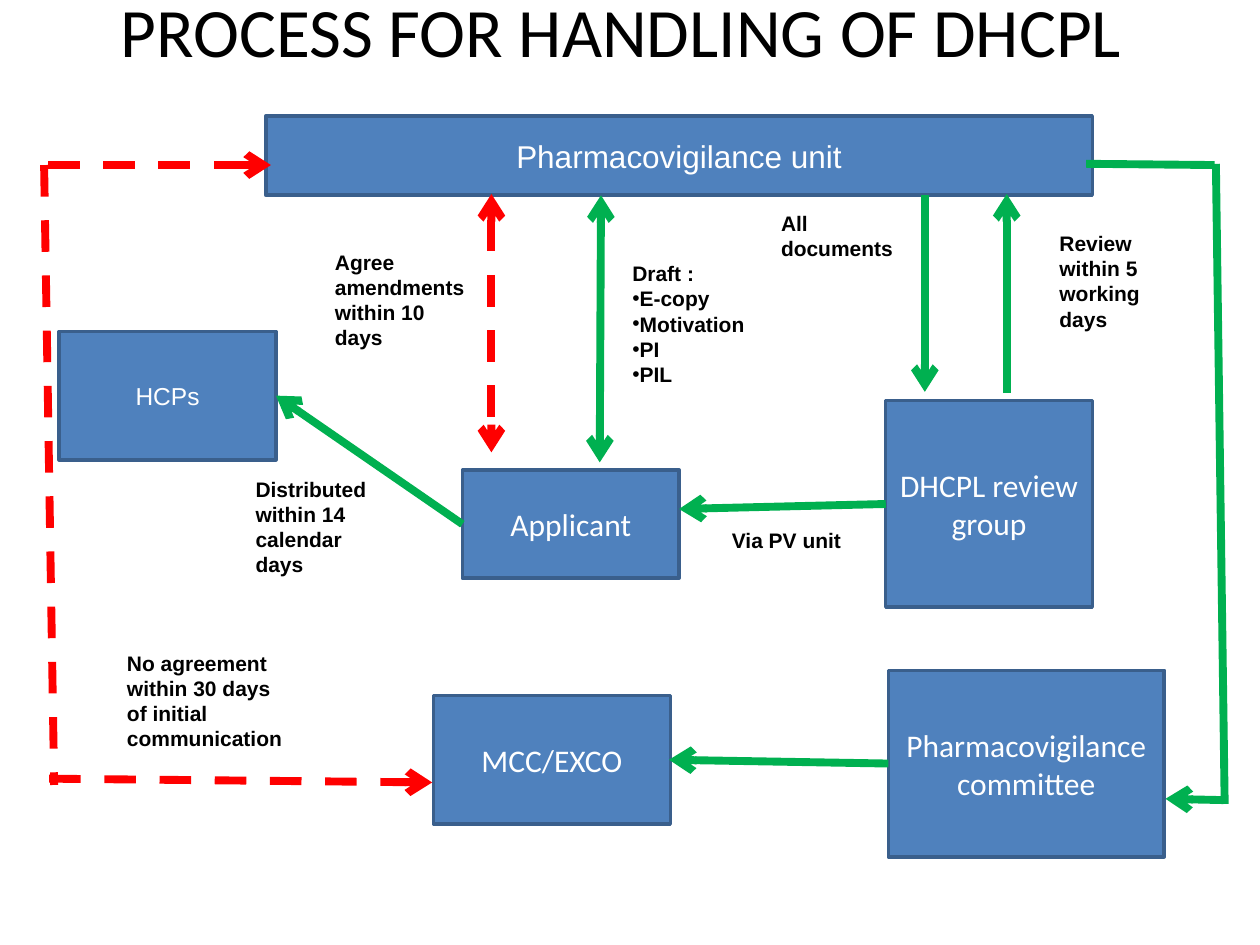
from dataclasses import dataclass
from typing import Any

from lxml import etree
from pptx import Presentation
from pptx.dml.color import RGBColor
from pptx.enum import dml, shapes, text
from pptx.oxml import ns
from pptx.util import Inches, Pt


@dataclass(frozen=True)
class Theme:
    box: RGBColor = RGBColor(0x4F, 0x81, 0xBD)
    border: RGBColor = RGBColor(0x3A, 0x5F, 0x8C)
    ink: RGBColor = RGBColor(0, 0, 0)
    paper: RGBColor = RGBColor(255, 255, 255)
    green: RGBColor = RGBColor(0, 0xB0, 0x50)
    red: RGBColor = RGBColor(255, 0, 0)
    heading: str = "Calibri"
    plain: str = "Arial"
    title_size: float = 39.6
    box_size: float = 18
    small_size: float = 14
    label_size: float = 12
    border_width: float = 2
    flow_width: float = 4.5


THEME = Theme()


@dataclass(frozen=True)
class Box:
    words: str
    left: float
    top: float
    width: float
    height: float
    font: str = THEME.heading
    size: float = THEME.box_size


@dataclass(frozen=True)
class Label:
    words: str
    left: float
    top: float
    width: float
    height: float
    bullets: tuple[str, ...] = ()


@dataclass(frozen=True)
class Flow:
    start: tuple[float, float]
    end: tuple[float, float]
    ends: tuple[str, ...] = ("tailEnd",)
    dashed: bool = False


NO_ENDS = ()
BOTH_ENDS = ("headEnd", "tailEnd")

BOXES = [
    Box("Pharmacovigilance unit", 2.11, 0.92, 6.56, 0.63, THEME.plain),
    Box("DHCPL review group", 7.03, 3.18, 1.64, 1.64),
    Box("Applicant", 3.67, 3.73, 1.72, 0.86),
    Box("HCPs", 0.47, 2.63, 1.72, 1.02, THEME.plain, THEME.small_size),
    Box("MCC/EXCO", 3.44, 5.52, 1.88, 1.02),
    Box("Pharmacovigilance committee", 7.05, 5.32, 2.19, 1.48),
]

FLOWS = [
    Flow((3.67, 4.16), (2.19, 3.14)),
    Flow((7.03, 4), (5.39, 4.04)),
    Flow((7.99, 3.12), (7.99, 1.54)),
    Flow((7.34, 1.55), (7.34, 3.11)),
    Flow((0.39, 6.18), (3.43, 6.21), dashed=True),
    Flow((2.15, 1.31), (0.35, 1.31), ("headEnd",), dashed=True),
    Flow((0.35, 1.31), (0.43, 6.23), NO_ENDS, dashed=True),
    Flow((8.62, 1.3), (9.64, 1.31), NO_ENDS),
    Flow((9.65, 1.3), (9.72, 6.38), NO_ENDS),
    Flow((9.71, 6.35), (9.25, 6.34)),
    Flow((7.05, 6.06), (5.31, 6.03)),
    Flow((4.76, 3.67), (4.77, 1.55), BOTH_ENDS),
    Flow((3.9, 1.54), (3.9, 3.59), BOTH_ENDS, dashed=True),
]

LABELS = [
    Label("Distributed within 14 calendar days", 1.93, 3.73, 1.1, 0.91),
    Label("Review within 5 working days", 8.31, 1.78, 1.02, 0.91),
    Label("All documents", 6.1, 1.62, 1.12, 0.5),
    Label("No agreement within 30 days of initial communication", 0.91, 5.11, 1.46, 0.91),
    Label("Draft :", 4.92, 2.02, 1.24, 1.11, ("E-copy", "Motivation", "PI", "PIL")),
    Label("Via PV unit", 5.71, 4.14, 1.12, 0.3),
    Label("Agree amendments within 10 days", 2.56, 1.93, 1.26, 0.91),
]


def assign(target: Any, values: dict[str, Any]) -> None:
    for name, value in values.items():
        setattr(target, name, value)


def write(p: Any, words: str, font: str, size: float, color: RGBColor, bold: bool = False) -> None:
    r = p.add_run()
    r.text = words
    assign(r.font, {"name": font, "size": Pt(size), "bold": bold})
    r.font.color.rgb = color


def add_bullet(p: Any) -> None:
    pr = p._p.get_or_add_pPr()
    pr.set("marL", "0")
    pr.set("indent", "0")
    etree.SubElement(pr, ns.qn("a:buFont"), typeface=THEME.plain)
    etree.SubElement(pr, ns.qn("a:buChar"), char="•")


def draw_title(s: Any, words: str) -> None:
    sp = s.shapes.title
    assign(sp, {"left": Inches(0.43), "top": 0, "width": Inches(9), "height": Inches(0.47)})
    tf = sp.text_frame
    assign(tf, {"auto_size": text.MSO_AUTO_SIZE.NONE, "vertical_anchor": text.MSO_ANCHOR.MIDDLE})
    p = tf.paragraphs[0]
    p.alignment = text.PP_ALIGN.CENTER
    write(p, words, THEME.heading, THEME.title_size, THEME.ink)


def draw_box(s: Any, box: Box) -> None:
    sp = s.shapes.add_shape(
        shapes.MSO_SHAPE.RECTANGLE,
        Inches(box.left), Inches(box.top), Inches(box.width), Inches(box.height),
    )
    sp.shadow.inherit = False
    sp.fill.solid()
    sp.fill.fore_color.rgb = THEME.box
    sp.line.color.rgb = THEME.border
    sp.line.width = Pt(THEME.border_width)
    tf = sp.text_frame
    assign(tf, {"word_wrap": True, "vertical_anchor": text.MSO_ANCHOR.MIDDLE})
    p = tf.paragraphs[0]
    p.alignment = text.PP_ALIGN.CENTER
    write(p, box.words, box.font, box.size, THEME.paper)


def draw_flow(s: Any, flow: Flow) -> None:
    sp = s.shapes.add_connector(
        shapes.MSO_CONNECTOR.STRAIGHT, *(Inches(v) for v in flow.start + flow.end)
    )
    sp.line.color.rgb = THEME.red if flow.dashed else THEME.green
    sp.line.width = Pt(THEME.flow_width)
    if flow.dashed:
        sp.line.dash_style = dml.MSO_LINE.DASH
    ln = sp.line._get_or_add_ln()
    for end in flow.ends:
        etree.SubElement(ln, ns.qn(f"a:{end}"), type="arrow")
    etree.SubElement(sp._element.spPr, ns.qn("a:effectLst"))


def draw_label(s: Any, label: Label) -> None:
    sp = s.shapes.add_textbox(
        Inches(label.left), Inches(label.top), Inches(label.width), Inches(label.height)
    )
    tf = sp.text_frame
    assign(tf, {"word_wrap": True, "auto_size": text.MSO_AUTO_SIZE.SHAPE_TO_FIT_TEXT})
    style = (THEME.plain, THEME.label_size, THEME.ink, True)
    write(tf.paragraphs[0], label.words, *style)
    for item in label.bullets:
        p = tf.add_paragraph()
        add_bullet(p)
        write(p, item, *style)


def main() -> None:
    prs = Presentation()
    assign(prs, {"slide_width": Inches(10), "slide_height": Inches(7.5)})
    s = prs.slides.add_slide(prs.slide_layouts[5])
    draw_title(s, "PROCESS FOR HANDLING OF DHCPL")
    for box in BOXES:
        draw_box(s, box)
    for flow in FLOWS:
        draw_flow(s, flow)
    for label in LABELS:
        draw_label(s, label)
    prs.save("out.pptx")


if __name__ == "__main__":
    main()
